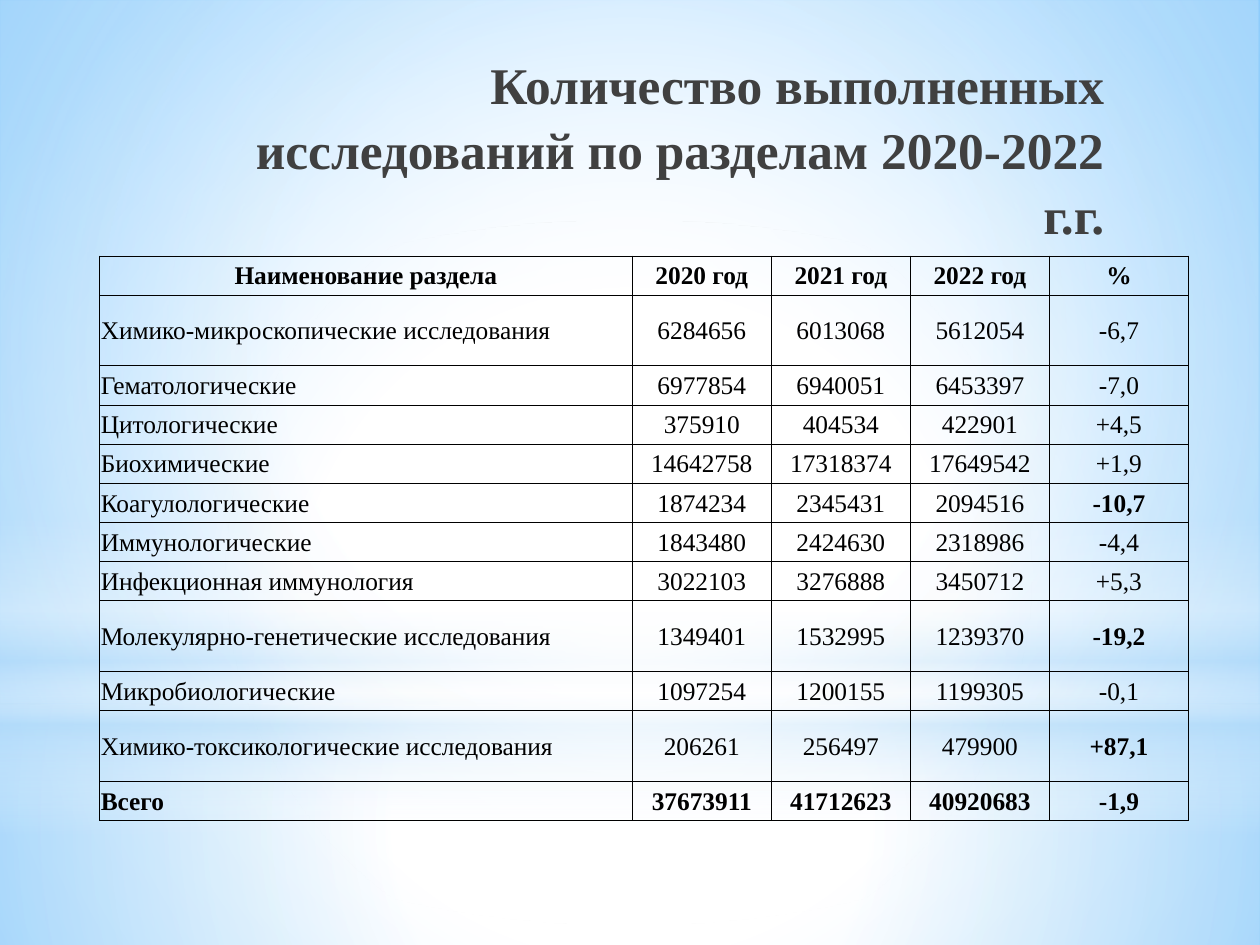
from typing import NamedTuple

import pptx
import pptx.dml.color
import pptx.enum.shapes
import pptx.enum.text
import pptx.oxml
import pptx.oxml.ns
import pptx.util

Cm = pptx.util.Cm
Pt = pptx.util.Pt
SHAPES = pptx.enum.shapes.MSO_SHAPE
ALIGN = pptx.enum.text.PP_ALIGN
ANCHOR = pptx.enum.text.MSO_ANCHOR
NAMESPACE = pptx.oxml.ns.nsdecls("a")

FONT = "Times New Roman"
WIDTH, HEIGHT = 28, 21
DOWNWARD = '<a:lin ang="5400000" scaled="0"/>'


class Stop(NamedTuple):
    position: int
    color: str
    opacity: int = 100


class Glow(NamedTuple):
    shape: pptx.enum.shapes.MSO_SHAPE
    top: float
    height: float
    stops: list[Stop]
    direction: str


class Section(NamedTuple):
    name: str
    counts: tuple[str, str, str]
    change: str


def radial(left: int, top: int, right: int, bottom: int) -> str:
    """Gradient direction outwards from a focus given by percent insets."""
    return (f'<a:path path="circle"><a:fillToRect l="{left}000" t="{top}000" '
            f'r="{right}000" b="{bottom}000"/></a:path>')


CENTRE = radial(50, 50, 50, 50)
BACKGROUND = [Stop(0, "FFFFFF"), Stop(42, "FFFFFF"), Stop(100, "63BCFF")]
GLOWS = [
    Glow(SHAPES.RECTANGLE, 15.65, 5.35,
         [Stop(0, "FFFFFF", 91), Stop(37, "FFFFFF", 76), Stop(100, "B4DCFA", 79)], CENTRE),
    Glow(SHAPES.RECTANGLE, 0, 15.65,
         [Stop(0, "FFFFFF", 89), Stop(48, "FFFFFF", 62), Stop(100, "B4DCFA", 79)], CENTRE),
    Glow(SHAPES.RECTANGLE, 11.53, 7.01,
         [Stop(0, "FFFFFF", 0), Stop(29, "FFFFFF", 30), Stop(45, "B4DCFA", 40),
          Stop(55, "FFFFFF", 26), Stop(65, "B4DCFA", 60), Stop(100, "FFFFFF", 0)], DOWNWARD),
    Glow(SHAPES.OVAL, 4.9, 15.65, [Stop(0, "FFFFFF"), Stop(56, "FFFFFF", 0)], CENTRE),
]

TITLE = "Количество выполненных исследований по разделам 2020-2022 г.г."
HEADER = Section("Наименование раздела", ("2020 год", "2021 год", "2022 год"), "%")
SECTIONS = [
    Section("Химико-микроскопические исследования", ("6284656", "6013068", "5612054"), "-6,7"),
    Section("Гематологические", ("6977854", "6940051", "6453397"), "-7,0"),
    Section("Цитологические", ("375910", "404534", "422901"), "+4,5"),
    Section("Биохимические", ("14642758", "17318374", "17649542"), "+1,9"),
    Section("Коагулологические", ("1874234", "2345431", "2094516"), "-10,7"),
    Section("Иммунологические", ("1843480", "2424630", "2318986"), "-4,4"),
    Section("Инфекционная иммунология", ("3022103", "3276888", "3450712"), "+5,3"),
    Section("Молекулярно-генетические исследования", ("1349401", "1532995", "1239370"), "-19,2"),
    Section("Микробиологические", ("1097254", "1200155", "1199305"), "-0,1"),
    Section("Химико-токсикологические исследования", ("206261", "256497", "479900"), "+87,1"),
]
TOTAL = Section("Всего", ("37673911", "41712623", "40920683"), "-1,9")
COLUMN_WIDTHS = [11.84] + 4 * [3.09]
ROW_HEIGHT, TALL_ROW_HEIGHT = 0.87, 1.57


def rgb(color: str) -> pptx.dml.color.RGBColor:
    return pptx.dml.color.RGBColor.from_string(color)


def set_gradient(fill, properties, stops: list[Stop], direction: str) -> None:
    """Give the fill held by a properties element a gradient."""
    fill.solid()
    marks = "".join(
        f'<a:gs pos="{stop.position}000"><a:srgbClr val="{stop.color}">'
        f'<a:alpha val="{stop.opacity}000"/></a:srgbClr></a:gs>' for stop in stops)
    gradient = pptx.oxml.parse_xml(
        f'<a:gradFill {NAMESPACE} rotWithShape="1"><a:gsLst>{marks}</a:gsLst>'
        f'{direction}</a:gradFill>')
    properties.replace(properties.find(pptx.oxml.ns.qn("a:solidFill")), gradient)


def add_glow(page, glow: Glow) -> None:
    shape = page.shapes.add_shape(glow.shape, 0, Cm(glow.top), Cm(WIDTH), Cm(glow.height))
    shape.shadow.inherit = False
    shape.line.fill.background()
    set_gradient(shape.fill, shape._element.spPr, glow.stops, glow.direction)


def add_text(para, text: str, size: float, color: str, bold: bool) -> None:
    span = para.add_run()
    span.text = text
    span.font.name = FONT
    span.font.size = Pt(size)
    span.font.bold = bold
    span.font.color.rgb = rgb(color)


def add_title(page) -> None:
    box = page.shapes.add_textbox(Cm(3.81), Cm(0.89), Cm(21.01), Cm(3.5))
    frame = box.text_frame
    frame.word_wrap = True
    frame.vertical_anchor = ANCHOR.TOP
    frame.margin_left = frame.margin_right = Cm(0.28)
    frame.margin_top, frame.margin_bottom = Cm(0.23), Cm(0.15)
    para = frame.paragraphs[0]
    para.alignment = ALIGN.RIGHT
    para.line_spacing = 1.05
    add_text(para, TITLE, 32.4, "404040", True)


def add_borders(cell) -> None:
    properties = cell._tc.get_or_add_tcPr()
    for index, side in enumerate(("lnL", "lnR", "lnT", "lnB")):
        properties.insert(index, pptx.oxml.parse_xml(
            f'<a:{side} {NAMESPACE} w="{Pt(0.5)}"><a:solidFill>'
            f'<a:srgbClr val="000000"/></a:solidFill></a:{side}>'))


def fill_cell(cell, text: str, centred: bool, bold: bool) -> None:
    cell.fill.background()
    cell.vertical_anchor = ANCHOR.MIDDLE
    cell.margin_left = cell.margin_right = cell.margin_top = Cm(0.03)
    cell.margin_bottom = 0
    para = cell.text_frame.paragraphs[0]
    para.alignment = ALIGN.CENTER if centred else ALIGN.LEFT
    add_text(para, text, 16, "000000", bold)
    add_borders(cell)


def is_sharp(change: str) -> bool:
    """Changes above ten percent stand out in bold."""
    return abs(float(change.replace(",", "."))) > 10


def add_section_table(page) -> None:
    lines = [HEADER, *SECTIONS, TOTAL]
    heights = [TALL_ROW_HEIGHT if line.name.endswith("исследования") else ROW_HEIGHT
               for line in lines]
    table = page.shapes.add_table(
        len(lines), len(COLUMN_WIDTHS), Cm(2.21), Cm(5.69),
        Cm(sum(COLUMN_WIDTHS)), Cm(sum(heights))).table
    table.first_row = table.horz_banding = False
    for column, width in zip(table.columns, COLUMN_WIDTHS):
        column.width = Cm(width)
    for row, line, height in zip(table.rows, lines, heights):
        row.height = Cm(height)
        strong = line in (HEADER, TOTAL)
        name, *counts, change = row.cells
        fill_cell(name, line.name, line is HEADER, strong)
        for cell, count in zip(counts, line.counts):
            fill_cell(cell, count, True, strong)
        fill_cell(change, line.change, True, strong or is_sharp(line.change))


def main() -> None:
    deck = pptx.Presentation()
    deck.slide_width, deck.slide_height = Cm(WIDTH), Cm(HEIGHT)
    page = deck.slides.add_slide(deck.slide_layouts[6])
    fill = page.background.fill
    properties = page._element.find(".//" + pptx.oxml.ns.qn("p:bgPr"))
    set_gradient(fill, properties, BACKGROUND, radial(24, 44, 24, 12))
    for glow in GLOWS:
        add_glow(page, glow)
    add_title(page)
    add_section_table(page)
    deck.save("out.pptx")


if __name__ == "__main__":
    main()
